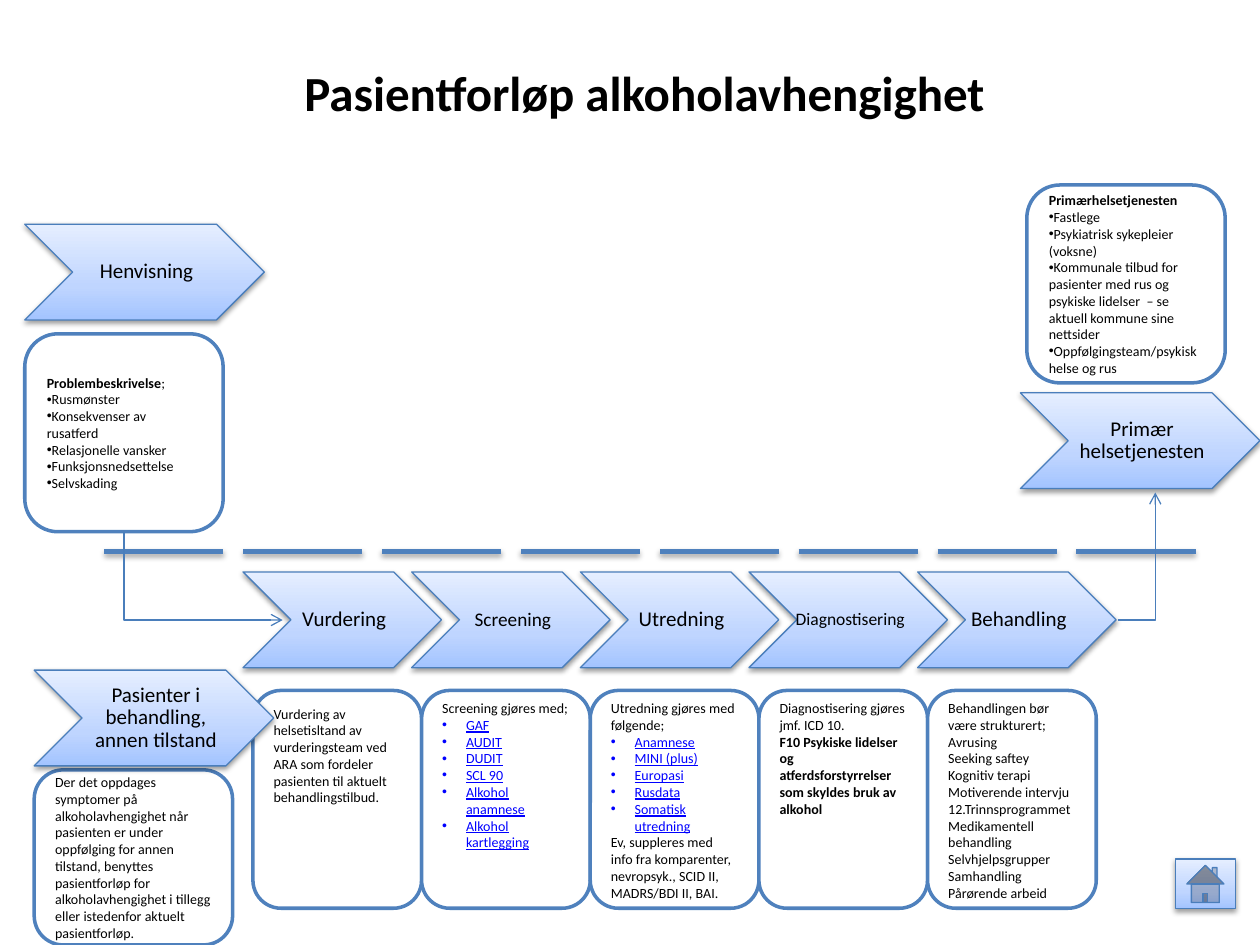
from copy import deepcopy

from lxml import etree
from pptx import Presentation, util as u
from pptx.dml.color import RGBColor
from pptx.enum import shapes, text
from pptx.oxml.ns import qn

Cm, Pt = u.Cm, u.Pt
rgb = RGBColor.from_string


def outline(sp, colour, width, shadow=0):
    """Set the line of a shape or connector, with a drop shadow of the given opacity or none."""
    sp.line.color.rgb = rgb(colour)
    sp.line.width = Pt(width)
    effects = etree.SubElement(sp._element.spPr, qn("a:effectLst"))
    if shadow:
        drop = etree.SubElement(effects, qn("a:outerShdw"), blurRad=str(Pt(3.1)),
                                dist=str(Pt(1.6)), dir="5400000", rotWithShape="0")
        clr = etree.SubElement(drop, qn("a:srgbClr"), val="000000")
        etree.SubElement(clr, qn("a:alpha"), val=str(shadow * 1000))


def add_run(p, words, size, bold=False, colour="000000", underline=False):
    r = p.add_run()
    r.text = words
    r.font.name, r.font.size, r.font.bold = "Calibri", Pt(size), bold
    r.font.underline = underline
    r.font.color.rgb = rgb(colour)


prs = Presentation()
prs.slide_width, prs.slide_height = Cm(25.4), Cm(19.05)
s = prs.slides.add_slide(prs.slide_layouts[5])

title = s.shapes.title
title.left, title.top, title.width, title.height = Cm(5.1), Cm(1.14), Cm(15.78), Cm(1.45)
title.text_frame.vertical_anchor = text.MSO_ANCHOR.TOP
p = title.text_frame.paragraphs[0]
p.alignment = text.PP_ALIGN.CENTER
add_run(p, "Pasientforløp alkoholavhengighet", 28, bold=True)

# Text boxes: paragraphs are (kind, text, optional plain continuation)
step_texts = [
    [("plain", "Vurdering av helsetisltand av vurderingsteam ved ARA som fordeler "
               "pasienten til aktuelt behandlingstilbud.")],
    [("plain", "Screening gjøres med;"), ("link", "GAF"), ("link", "AUDIT"), ("link", "DUDIT"),
     ("link", "SCL 90"), ("link", "Alkohol anamnese"), ("link", "Alkohol kartlegging")],
    [("plain", "Utredning gjøres med følgende;"), ("link", "Anamnese"), ("link", "MINI (plus)"),
     ("link", "Europasi"), ("link", "Rusdata"), ("link", "Somatisk utredning"),
     ("plain", "Ev, suppleres med info fra komparenter, nevropsyk., SCID II, MADRS/BDI II, BAI.")],
    [("plain", "Diagnostisering gjøres jmf. ICD 10."),
     ("bold", "F10 Psykiske lidelser og atferdsforstyrrelser som skyldes bruk av alkohol")],
    [("plain", line) for line in (
        "Behandlingen bør være strukturert;", "Avrusing", "Seeking saftey", "Kognitiv terapi",
        "Motiverende intervju", "12.Trinnsprogrammet", "Medikamentell behandling",
        "Selvhjelpsgrupper", "Samhandling", "Pårørende arbeid")],
]
# left, top, width, height, top inset (None: centred vertically), paragraphs
boxes = [(5.1 + 3.4 * i, 13.92, 3.4, 4.39, 0.02 if i else 0.13, paras)
         for i, paras in enumerate(step_texts)]
boxes += [
    (0.5, 6.73, 4, 3.99, None, [
        ("bold", "Problembeskrivelse", ";"), ("bullet", "Rusmønster"),
        ("bullet", "Konsekvenser av rusatferd"), ("bullet", "Relasjonelle vansker"),
        ("bullet", "Funksjonsnedsettelse"), ("bullet", "Selvskading")]),
    (0.69, 15.52, 4, 3.53, None, [
        ("plain", "Der det oppdages symptomer på alkoholavhengighet når pasienten er under "
                  "oppfølging for annen tilstand, benyttes pasientforløp for "
                  "alkoholavhengighet i tillegg eller istedenfor aktuelt pasientforløp.")]),
    (20.7, 3.73, 4, 3.99, None, [
        ("bold", "Primærhelsetjenesten"), ("bullet", "Fastlege"),
        ("bullet", "Psykiatrisk sykepleier (voksne)"),
        ("bullet", "Kommunale tilbud for pasienter med rus og psykiske lidelser  – se "
                   "aktuell kommune sine nettsider"),
        ("bullet", "Oppfølgingsteam/psykisk helse og rus")]),
]
for x, y, w, h, inset, paras in boxes:
    sp = s.shapes.add_shape(shapes.MSO_SHAPE.ROUNDED_RECTANGLE, Cm(x), Cm(y), Cm(w), Cm(h))
    sp.fill.solid()
    sp.fill.fore_color.rgb = rgb("FFFFFF")
    outline(sp, "4F81BD", 2)
    tf = sp.text_frame
    tf.word_wrap = True
    tf.vertical_anchor = text.MSO_ANCHOR.MIDDLE
    if inset is not None:
        tf.vertical_anchor = text.MSO_ANCHOR.TOP
        tf.margin_top = Cm(inset)
    for i, (kind, words, *rest) in enumerate(paras):
        p = tf.add_paragraph() if i else tf.paragraphs[0]
        p.alignment = text.PP_ALIGN.LEFT
        link = kind == "link"
        if link or kind == "bullet":
            pPr = p._p.get_or_add_pPr()
            indent = Cm(0.48) if link else 0
            pPr.set("marL", str(indent))
            pPr.set("indent", str(-indent))
            etree.SubElement(pPr, qn("a:buFont"), typeface="Arial")
            etree.SubElement(pPr, qn("a:buChar"), char="•")
        add_run(p, words, 8, kind == "bold", "0000FF" if link else "000000", link)
        for more in rest:
            add_run(p, more, 8)

for i in range(8):
    x = 2.1 + 2.8 * i
    dash = s.shapes.add_connector(shapes.MSO_CONNECTOR.STRAIGHT,
                                  Cm(x), Cm(11.12), Cm(x + 2.4), Cm(11.12))
    outline(dash, "4F81BD", 3, shadow=35)

# Gradient shapes: kind, left, top, width, height, label, text size
chevron = shapes.MSO_SHAPE.CHEVRON
steps = [("Vurdering", 12), ("Screening", 11), ("Utredning", 12),
         ("Diagnostisering", 10), ("Behandling", 12)]
gradient_shapes = [
    (chevron, 0.5, 4.52, 4.83, 1.93, "Henvisning", 12),
    (chevron, 0.69, 13.51, 4.83, 1.93, "Pasienter i behandling, annen tilstand", 12),
    (chevron, 20.57, 7.92, 4.83, 1.93, "Primær helsetjenesten", 12),
    (shapes.MSO_SHAPE.ACTION_BUTTON_HOME, 23.7, 17.32, 1.2, 1, "", 12),
]
gradient_shapes += [(chevron, 4.9 + 3.4 * i, 11.53, 4, 1.93, label, size)
                    for i, (label, size) in enumerate(steps)]
for kind, x, y, w, h, label, size in gradient_shapes:
    sp = s.shapes.add_shape(kind, Cm(x), Cm(y), Cm(w), Cm(h))
    sp.fill.gradient()
    sp.fill.gradient_angle = 90
    stop_list = sp._element.spPr.find(".//" + qn("a:gsLst"))
    stop_list.insert(1, deepcopy(stop_list[0]))
    stops = zip(sp.fill.gradient_stops, (0, 0.35, 1), ("A3C4FF", "BFD5FF", "E5EEFF"))
    for stop, position, colour in stops:
        stop.position = position
        stop.color.rgb = rgb(colour)
    outline(sp, "4A7EBB", 0.75, shadow=38)
    if label:
        tf = sp.text_frame
        tf.word_wrap = " " in label  # single words stay on one line
        tf.vertical_anchor = text.MSO_ANCHOR.MIDDLE
        tf.margin_left = Cm(0.13)
        tf.margin_right = tf.margin_top = tf.margin_bottom = Cm(0.05)
        p = tf.paragraphs[0]
        p.alignment = text.PP_ALIGN.CENTER
        p.line_spacing = 0.9
        add_run(p, label, size)

# Elbow arrows: ends before rotation, rotation in degrees
elbows = [(4.99, 10.01, 3.21, 13.21, 270), (22.53, 12.5, 23.29, 9.93, 0)]
for x1, y1, x2, y2, angle in elbows:
    arrow = s.shapes.add_connector(shapes.MSO_CONNECTOR.ELBOW, Cm(x1), Cm(y1), Cm(x2), Cm(y2))
    spPr = arrow._element.spPr
    spPr.find(qn("a:prstGeom")).set("prst", "bentConnector2")
    if angle:
        spPr.find(qn("a:xfrm")).set("rot", str(angle * 60000))
    outline(arrow, "4A7EBB", 0.75)
    etree.SubElement(spPr.find(qn("a:ln")), qn("a:tailEnd"), type="arrow")

prs.save("out.pptx")
